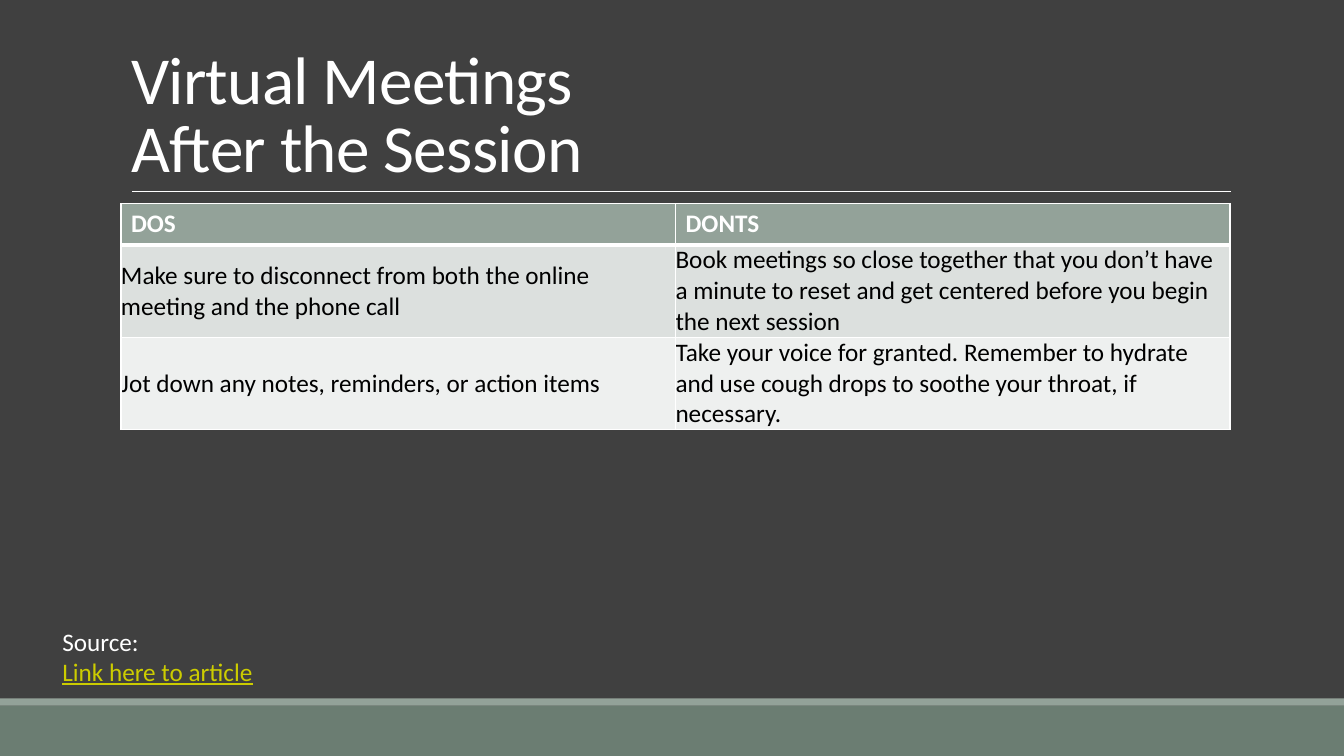
from dataclasses import dataclass

from lxml.etree import SubElement
from pptx import Presentation
from pptx.dml.color import RGBColor
from pptx.enum.shapes import MSO_CONNECTOR, MSO_SHAPE
from pptx.enum.text import MSO_ANCHOR, MSO_AUTO_SIZE, PP_ALIGN
from pptx.oxml.ns import qn
from pptx.util import Emu, Pt


@dataclass(frozen=True)
class Theme:
    font: str = "Calibri"
    title_size: int = 48
    body_size: int = 18
    background: str = "404040"
    light: str = "FFFFFF"
    dark: str = "000000"
    sage: str = "93A299"
    deep_sage: str = "6B7D72"
    link: str = "CCCC00"
    bands: tuple = ("DCE0DE", "EEF0EF")


THEME = Theme()
SLIDE_W, SLIDE_H = 1333, 750
HEADERS = ("DOS", "DONTS")
ADVICE = (
    ("Make sure to disconnect from both the online meeting and the phone call",
     "Book meetings so close together that you don’t have a minute to reset "
     "and get centered before you begin the next session"),
    ("Jot down any notes, reminders, or action items",
     "Take your voice for granted. Remember to hydrate and use cough drops "
     "to soothe your throat, if necessary."),
)


def px(length):
    """Turn px, 100 to the inch, into EMU."""
    return Emu(length * 9144)


def box_emu(box):
    return [px(length) for length in box]


def paint(fill, color):
    fill.solid()
    fill.fore_color.rgb = RGBColor.from_string(color)


def style_runs(paragraph, color, size=THEME.body_size, bold=False):
    for run in paragraph.runs:
        run.font.name = THEME.font
        run.font.size = Pt(size)
        run.font.bold = bold
        run.font.color.rgb = RGBColor.from_string(color)


def add_footer_band(slide, box):
    left, top, width, height = box
    stripe = 7
    for y, depth, color in ((top + stripe, height - stripe, THEME.deep_sage),
                            (top, stripe, THEME.sage)):
        band = slide.shapes.add_shape(
            MSO_SHAPE.RECTANGLE, *box_emu((left, y, width, depth)))
        band.shadow.inherit = False
        paint(band.fill, color)
        band.line.fill.background()


def add_title(slide, box):
    """Fill the title placeholder and rule a line along its lower edge."""
    left, top, width, height = box
    title = slide.shapes.title
    title.left, title.top, title.width, title.height = box_emu(box)
    frame = title.text_frame
    frame.word_wrap = True
    frame.auto_size = MSO_AUTO_SIZE.NONE
    frame.vertical_anchor = MSO_ANCHOR.BOTTOM
    heading = frame.paragraphs[0]
    heading.text = "Virtual Meetings\vAfter the Session"
    heading.alignment = PP_ALIGN.LEFT
    heading.line_spacing = 0.85
    style_runs(heading, THEME.light, THEME.title_size)
    for run in heading.runs:
        run.font._element.set("spc", "-50")

    y = px(top + height)
    rule = slide.shapes.add_connector(
        MSO_CONNECTOR.STRAIGHT, px(left + 11), y, px(left + width + 1), y)
    rule.line.color.rgb = RGBColor.from_string(THEME.light)
    rule.line.width = Pt(0.5)
    SubElement(rule._element.spPr, qn("a:effectLst"))


def add_borders(cell, top, bottom):
    """Border a cell in the light colour; top and bottom widths are points."""
    properties = cell._tc.get_or_add_tcPr()
    for side, width in (("L", 1), ("R", 1), ("T", top), ("B", bottom)):
        line = SubElement(properties, qn(f"a:ln{side}"), w=str(Pt(width)))
        fill = SubElement(line, qn("a:solidFill"))
        SubElement(fill, qn("a:srgbClr"), val=THEME.light)


def add_advice_table(slide, box):
    header_height = 41
    left, top, width, height = box
    rows = (HEADERS, *ADVICE)
    table = slide.shapes.add_table(
        len(rows), len(HEADERS), *box_emu(box)).table
    for column in table.columns:
        column.width = px(width // len(HEADERS))
    for r, texts in enumerate(rows):
        is_header = r == 0
        table.rows[r].height = px(
            header_height if is_header
            else (height - header_height) // len(ADVICE))
        for c, text in enumerate(texts):
            cell = table.cell(r, c)
            cell.text = text
            style_runs(cell.text_frame.paragraphs[0],
                       THEME.light if is_header else THEME.dark,
                       bold=is_header)
            cell.margin_left = cell.margin_right = px(10 if is_header else 0)
            cell.margin_top = cell.margin_bottom = px(5 if is_header else 0)
            cell.vertical_anchor = (
                MSO_ANCHOR.TOP if is_header else MSO_ANCHOR.MIDDLE)
            add_borders(cell, top=3 if r == 1 else 1,
                        bottom=3 if is_header else 1)
            paint(cell.fill, THEME.sage if is_header else THEME.bands[r - 1])


def add_source(slide, box):
    frame = slide.shapes.add_textbox(*box_emu(box)).text_frame
    frame.word_wrap = True
    label = frame.paragraphs[0]
    label.text = "Source:"
    style_runs(label, THEME.light)
    article = frame.add_paragraph()
    article.text = "Link here to article"
    style_runs(article, THEME.link)
    article.runs[0].font.underline = True


def main():
    deck = Presentation()
    deck.slide_width, deck.slide_height = px(SLIDE_W), px(SLIDE_H)
    title_only = deck.slide_layouts[5]
    slide = deck.slides.add_slide(title_only)
    paint(slide.background.fill, THEME.background)
    add_footer_band(slide, (0, 693, SLIDE_W, 57))
    add_title(slide, (120, 31, 1100, 159))
    add_advice_table(slide, (120, 202, 1100, 221))
    add_source(slide, (52, 616, 1217, 101))
    deck.save("out.pptx")


if __name__ == "__main__":
    main()
